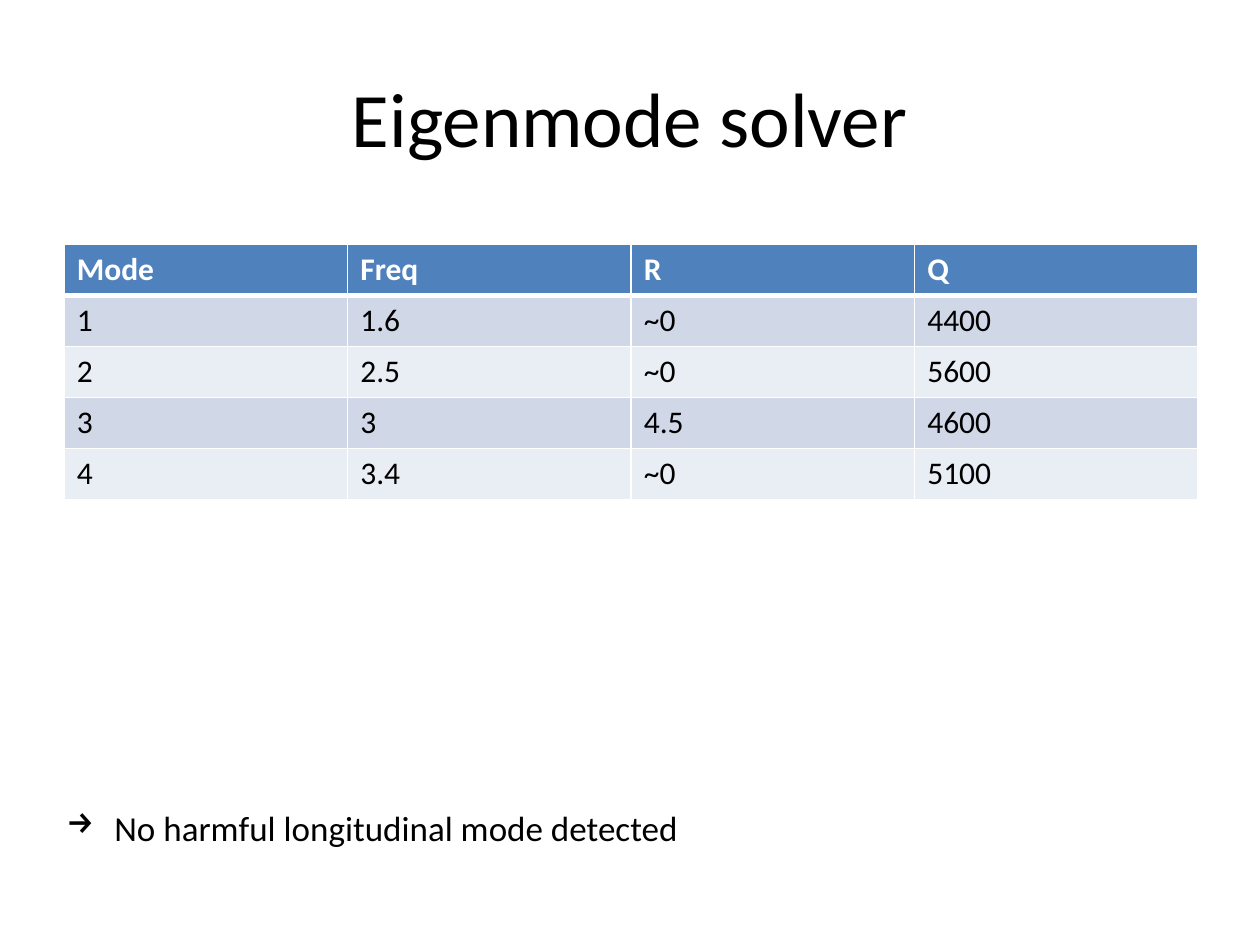
from dataclasses import dataclass

from lxml import etree
from pptx import Presentation
from pptx.dml.color import RGBColor
from pptx.enum.text import MSO_ANCHOR, PP_ALIGN
from pptx.oxml.ns import qn
from pptx.slide import Slide
from pptx.table import _Cell
from pptx.text.text import _Paragraph
from pptx.util import Inches, Pt

CENTER, LEFT = PP_ALIGN.CENTER, PP_ALIGN.LEFT
MIDDLE, TOP = MSO_ANCHOR.MIDDLE, MSO_ANCHOR.TOP
FONT = "Calibri"
COLORS = {
    "text": "000000",
    "white": "FFFFFF",
    "header": "4F81BD",
    "odd_row": "D0D8E8",
    "even_row": "E9EDF4",
}
MODES = [
    ("Mode", "Freq", "R", "Q"),
    ("1", "1.6", "~0", "4400"),
    ("2", "2.5", "~0", "5600"),
    ("3", "3", "4.5", "4600"),
    ("4", "3.4", "~0", "5100"),
]
ROW_HEIGHT = 0.405
COLUMN_WIDTH = 2.25


@dataclass
class TextBlock:
    """A text box, with its place in inches and its size in points."""

    text: str
    left: float
    top: float
    width: float
    height: float
    size: int
    align: PP_ALIGN = LEFT
    anchor: MSO_ANCHOR = TOP
    bullet: str = ""


BLOCKS = [
    TextBlock("Eigenmode solver", 0.5, 0.3, 9, 1.25, 44, CENTER, MIDDLE),
    TextBlock("No harmful longitudinal mode detected", 0.43, 6.35, 9, 1.06, 20, bullet="→"),
]


def style_text(para: _Paragraph, size: int, color: str, bold: bool = False) -> None:
    """Format every run of a paragraph."""
    for span in para.runs:
        span.font.name = FONT
        span.font.size = Pt(size)
        span.font.bold = bold
        span.font.color.rgb = RGBColor.from_string(COLORS[color])


def add_bullet(para: _Paragraph, symbol: str) -> None:
    """Give a paragraph a hanging bullet."""
    properties = para._p.get_or_add_pPr()
    properties.set("marL", str(Inches(0.38)))
    properties.set("indent", str(Inches(-0.38)))
    etree.SubElement(properties, qn("a:buChar")).set("char", symbol)


def add_text(page: Slide, block: TextBlock) -> None:
    """Draw a text block."""
    box = page.shapes.add_textbox(
        Inches(block.left), Inches(block.top), Inches(block.width), Inches(block.height)
    )
    frame = box.text_frame
    frame.word_wrap = True
    frame.vertical_anchor = block.anchor
    frame.text = block.text
    para = frame.paragraphs[0]
    para.alignment = block.align
    if block.bullet:
        add_bullet(para, block.bullet)
    style_text(para, block.size, "text")


def set_border(cell: _Cell, side: str, points: int) -> None:
    """Draw a white line on one side of a cell."""
    line = etree.SubElement(cell._tc.get_or_add_tcPr(), qn(f"a:ln{side}"))
    line.set("w", str(Pt(points)))
    fill = etree.SubElement(line, qn("a:solidFill"))
    etree.SubElement(fill, qn("a:srgbClr")).set("val", COLORS["white"])


def border_width(row: int, side: str) -> int:
    """Return the line width, thick between the header and the body."""
    return 3 if (row, side) in {(0, "B"), (1, "T")} else 1


def add_mode_table(page: Slide) -> None:
    """Draw the table of modes."""
    rows, columns = len(MODES), len(MODES[0])
    table = page.shapes.add_table(
        rows, columns, Inches(0.51), Inches(1.94),
        Inches(columns * COLUMN_WIDTH), Inches(rows * ROW_HEIGHT),
    ).table
    for row, values in enumerate(MODES):
        is_header = row == 0
        fill = "header" if is_header else "odd_row" if row % 2 else "even_row"
        for column, value in enumerate(values):
            cell = table.cell(row, column)
            cell.text_frame.text = value
            style_text(
                cell.text_frame.paragraphs[0], 18, "white" if is_header else "text", is_header
            )
            for side in "LRTB":
                set_border(cell, side, border_width(row, side))
            cell.fill.solid()
            cell.fill.fore_color.rgb = RGBColor.from_string(COLORS[fill])


def main() -> None:
    """Build and save the slide."""
    deck = Presentation()
    deck.slide_width, deck.slide_height = Inches(10), Inches(7.5)
    page = deck.slides.add_slide(deck.slide_layouts[6])
    title, conclusion = BLOCKS
    add_text(page, title)
    add_mode_table(page)
    add_text(page, conclusion)
    deck.save("out.pptx")


if __name__ == "__main__":
    main()
